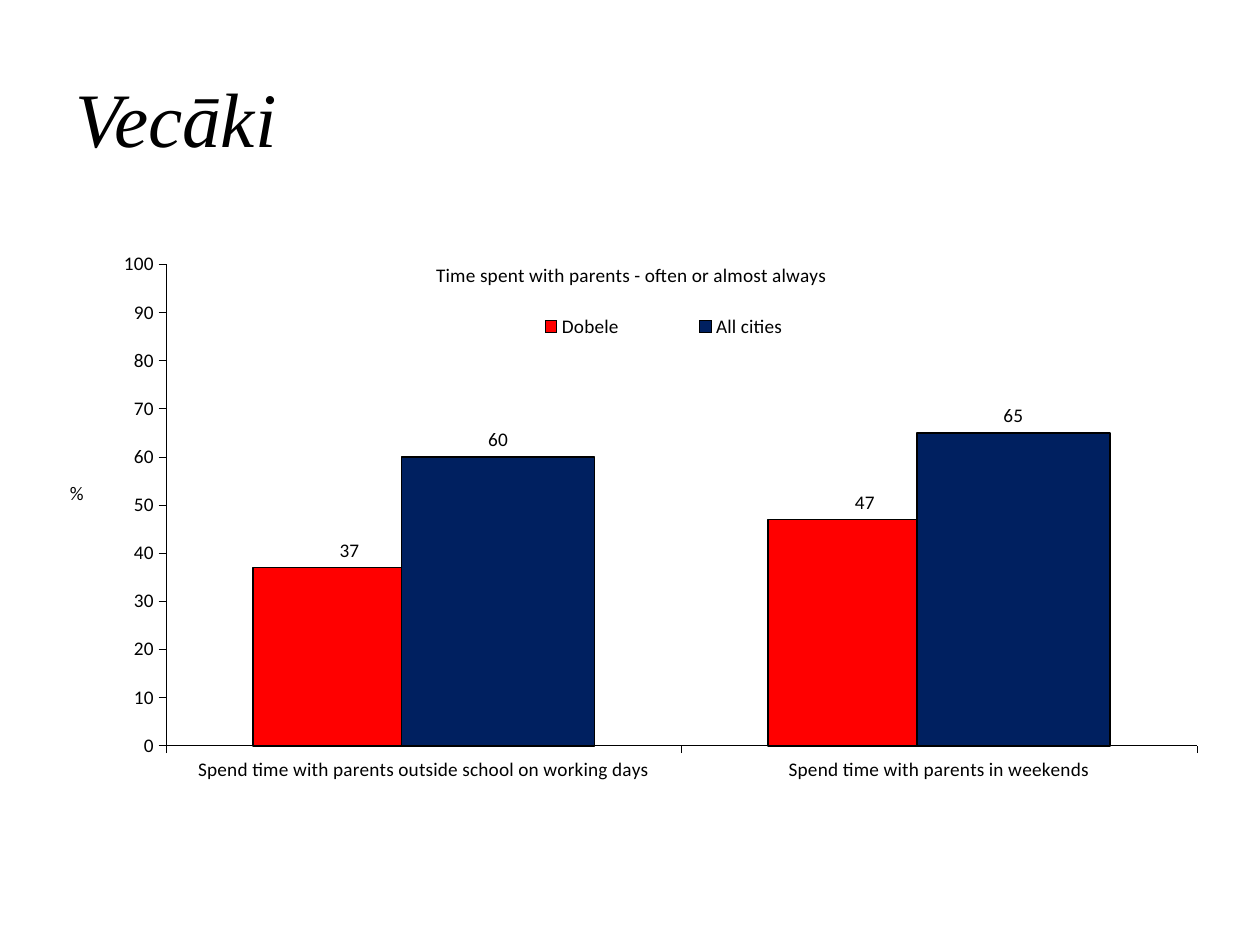
"""Build the slide on time that pupils spend with their parents."""
from dataclasses import dataclass

from lxml.etree import SubElement
from pptx import Presentation
from pptx.chart.data import CategoryChartData
from pptx.dml.color import RGBColor
from pptx.enum.chart import XL_CHART_TYPE, XL_LABEL_POSITION, XL_LEGEND_POSITION, XL_TICK_MARK
from pptx.enum.text import MSO_ANCHOR, PP_ALIGN
from pptx.oxml import parse_xml
from pptx.oxml.ns import nsdecls, qn
from pptx.util import Cm, Pt


def color(value):
    return RGBColor.from_string(value)


def place(part, index, x, y, width=None, height=None, inner=False):
    """Give a chart part a manual layout, in fractions of the chart."""
    for old in part.findall(qn("c:layout")):
        part.remove(old)
    layout = parse_xml(f"<c:layout {nsdecls('c')}><c:manualLayout/></c:layout>")
    settings = [("layoutTarget", "inner" if inner else None), ("xMode", "edge"),
                ("yMode", "edge"), ("x", x), ("y", y), ("w", width), ("h", height)]
    for tag, value in settings:
        if value is not None:
            SubElement(layout[0], qn(f"c:{tag}")).set("val", str(value))
    part.insert(index, layout)


@dataclass
class SlideWriter:
    """Hold the style and the current slide."""
    slide: object
    ink: str = "000000"
    title_font: str = "Times New Roman"
    chart_font: str = "Calibri"
    chart_size: int = 11

    def title(self, text):
        heading = self.slide.shapes.title
        heading.left, heading.top = Cm(1.27), Cm(0.76)
        heading.width, heading.height = Cm(22.86), Cm(3.18)
        frame = heading.text_frame
        frame.vertical_anchor = MSO_ANCHOR.MIDDLE
        paragraph = frame.paragraphs[0]
        paragraph.alignment = PP_ALIGN.LEFT
        run = paragraph.add_run()
        run.text = text
        run.font.name, run.font.size, run.font.italic = self.title_font, Pt(44), True
        run.font.color.rgb = color(self.ink)

    def chart_text(self, frame, text):
        run = frame.paragraphs[0].add_run()
        run.text = text
        self.chart_style(run.font)

    def chart_style(self, font):
        font.name, font.size, font.bold = self.chart_font, Pt(self.chart_size), False
        font.color.rgb = color(self.ink)

    def outline(self, line, width):
        line.color.rgb = color(self.ink)
        line.width = Pt(width)

    def column_chart(self, caption, unit, categories, series):
        data = CategoryChartData(number_format="0")
        data.categories = categories
        for name, values, _ in series:
            data.add_series(name, values)
        chart = self.slide.shapes.add_chart(
            XL_CHART_TYPE.COLUMN_CLUSTERED, Cm(1.27), Cm(4.45), Cm(22.86), Cm(12.57), data).chart
        self.chart_style(chart.font)
        place(chart._chartSpace.chart.plotArea, 0, 0.091, 0.07, 0.909, 0.772, inner=True)
        self.chart_text(chart.chart_title.text_frame, caption)
        place(chart.chart_title._element, 1, 0.326, 0.06)
        self.legend(chart)
        self.axes(chart, unit)
        self.columns(chart.plots[0], [fill for _, _, fill in series])

    def legend(self, chart):
        chart.has_legend = True
        chart.legend.position = XL_LEGEND_POSITION.RIGHT
        chart.legend.include_in_layout = False
        self.chart_style(chart.legend.font)
        place(chart.legend._element, 1, 0.36, 0.14, 0.34, 0.06)

    def axes(self, chart, unit):
        for axis in (chart.category_axis, chart.value_axis):
            axis.has_major_gridlines = False
            axis.major_tick_mark = XL_TICK_MARK.OUTSIDE
            self.outline(axis.format.line, 0.25)
            self.chart_style(axis.tick_labels.font)
        scale = chart.value_axis
        scale.minimum_scale, scale.maximum_scale, scale.major_unit = 0, 100, 10
        scale.tick_labels.number_format = "0"
        scale.tick_labels.number_format_is_linked = False
        frame = scale.axis_title.text_frame
        self.chart_text(frame, unit)
        frame._txBody.bodyPr.set("rot", "0")
        place(scale.axis_title._element, 1, 0.003, 0.41)

    def columns(self, plot, fills):
        plot.gap_width, plot.overlap, plot.vary_by_categories = 90, 23, False
        for columns, fill in zip(plot.series, fills):
            columns.format.fill.solid()
            columns.format.fill.fore_color.rgb = color(fill)
            self.outline(columns.format.line, 1)
            labels = columns.data_labels
            labels.show_value = True
            labels.position = XL_LABEL_POSITION.OUTSIDE_END
            labels.number_format, labels.number_format_is_linked = "0", False
            self.chart_style(labels.font)


def main():
    presentation = Presentation()
    presentation.slide_width, presentation.slide_height = Cm(25.4), Cm(19.05)
    writer = SlideWriter(presentation.slides.add_slide(presentation.slide_layouts[5]))
    writer.title("Vecāki")
    writer.column_chart(
        "Time spent with parents - often or almost always", "%",
        ["Spend time with parents outside school on working days",
         "Spend time with parents in weekends"],
        [("Dobele", (37, 47), "FF0000"), ("All cities", (60, 65), "002060")])
    presentation.save("out.pptx")


if __name__ == "__main__":
    main()
